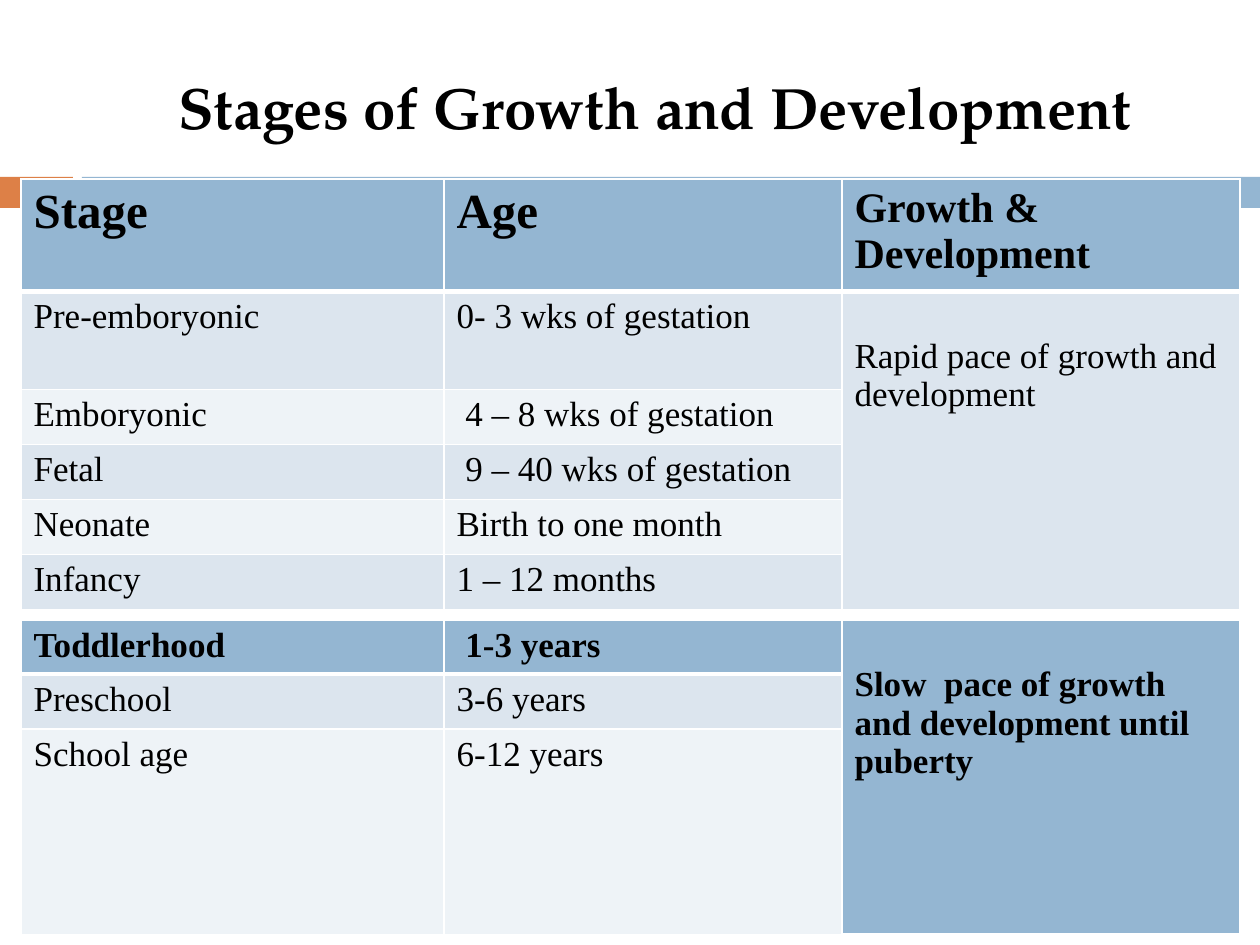
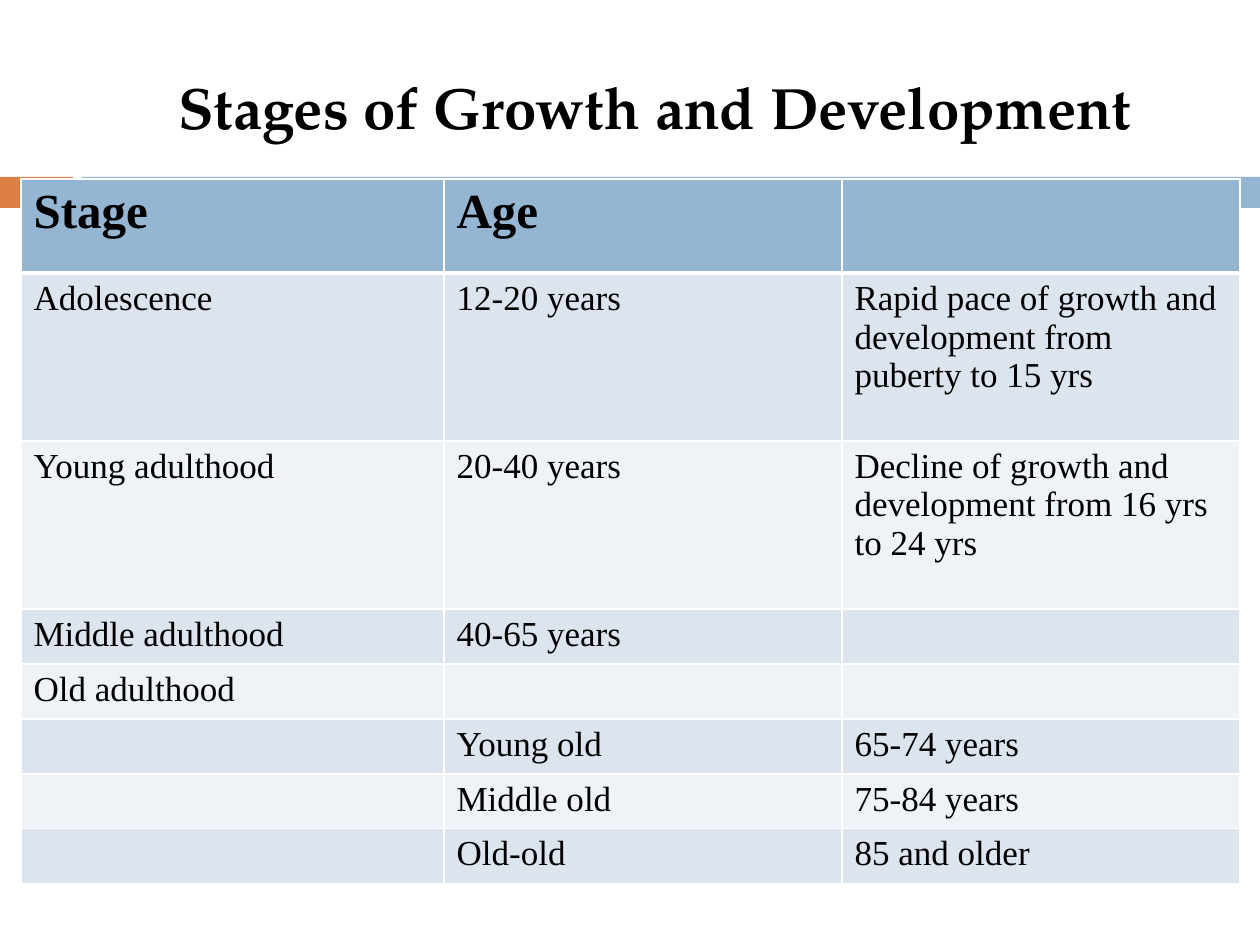
from dataclasses import dataclass

from lxml.etree import SubElement
from pptx import Presentation
from pptx.dml.color import RGBColor as Rgb
from pptx.enum.shapes import MSO_SHAPE as Preset
from pptx.enum.text import MSO_ANCHOR as Anchor, PP_ALIGN as Align
from pptx.oxml.ns import qn
from pptx.slide import Slide
from pptx.table import _Cell as Cell
from pptx.util import Emu, Pt

PX_PER_INCH = 126


def px(length: int) -> Emu:
    return Emu(round(length * 914400 / PX_PER_INCH))


@dataclass(frozen=True)
class Theme:
    ink: str = "000000"
    accent: str = "DD8047"
    header: str = "94B6D2"
    odd_row: str = "DCE5EE"
    even_row: str = "EEF3F7"
    border: str = "FFFFFF"
    title_font: str = "TeX Gyre Pagella"
    table_font: str = "Times New Roman"
    title_size: float = 33.3
    heading_size: int = 28
    long_heading_size: int = 24
    body_size: int = 20


THEME = Theme()


@dataclass(frozen=True)
class Band:
    left: int
    width: int
    color: str


@dataclass(frozen=True)
class Row:
    height: int
    stage: str = ""
    age: str = ""
    pace: str = ""


@dataclass(frozen=True)
class StageTable:
    top: int
    rows: tuple[Row, ...]
    heading_sizes: tuple[int, int, int]
    pace_from: int | None = None  # first row of a pace cell that runs to the last row


# Shared geometry
TITLE = "Stages of Growth and Development"
BANDS = (Band(0, 73, THEME.accent), Band(82, 1178, THEME.header))
BAND_TOP, BAND_HEIGHT = 177, 31
TABLE_LEFT, TABLE_TOP = 21, 179
COLUMN_WIDTHS = (423, 398, 398)
LINE_ROW = 55
CELL_MARGIN, TEXT_LINE = 6, 39
HEADING_SIZES = (THEME.heading_size, THEME.heading_size, THEME.long_heading_size)

# Content
EARLY_STAGES = StageTable(TABLE_TOP, (
    Row(105, "Stage", "Age", "Growth & Development"),
    Row(98, "Pre-emboryonic", "0- 3 wks of gestation", "Rapid pace of growth and development"),
    Row(LINE_ROW, "Emboryonic", " 4 – 8 wks of gestation"),
    Row(LINE_ROW, "Fetal", " 9 – 40 wks of gestation"),
    Row(LINE_ROW, "Neonate", "Birth to one month"),
    Row(LINE_ROW, "Infancy", "1 – 12 months"),
), HEADING_SIZES, pace_from=1)

CHILDHOOD = StageTable(620, (
    Row(51, "Toddlerhood", " 1-3 years", "Slow  pace of growth and development until puberty"),
    Row(LINE_ROW, "Preschool", "3-6 years"),
    Row(206, "School age", "6-12 years"),
), (THEME.body_size,) * 3, pace_from=0)

ADULTHOOD = StageTable(TABLE_TOP, (
    Row(94, "Stage", "Age"),
    Row(168, "Adolescence", "12-20 years",
        "Rapid pace of growth and development from puberty to 15 yrs"),
    Row(168, "Young adulthood", "20-40 years",
        "Decline of growth and development from 16 yrs to 24 yrs"),
    Row(LINE_ROW, "Middle adulthood", "40-65 years"),
    Row(LINE_ROW, "Old adulthood"),
    Row(LINE_ROW, "", "Young old", "65-74 years"),
    Row(LINE_ROW, "", "Middle old", "75-84 years"),
    Row(LINE_ROW, "", "Old-old", "85 and older"),
), HEADING_SIZES)

SLIDES = ((EARLY_STAGES, CHILDHOOD), (ADULTHOOD,))


def style_font(font, name: str, size: float, bold: bool) -> None:
    font.name, font.size, font.bold = name, Pt(size), bold
    font.color.rgb = Rgb.from_string(THEME.ink)


def draw_bands(slide: Slide) -> None:
    for band in BANDS:
        bar = slide.shapes.add_shape(Preset.RECTANGLE, px(band.left), px(BAND_TOP),
                                     px(band.width), px(BAND_HEIGHT))
        bar.shadow.inherit = False
        bar.fill.solid()
        bar.fill.fore_color.rgb = Rgb.from_string(band.color)
        bar.line.fill.background()


def draw_title(slide: Slide) -> None:
    frame = slide.shapes.add_textbox(px(57), px(64), px(1197), px(84)).text_frame
    frame.word_wrap = True
    frame.vertical_anchor = Anchor.MIDDLE
    frame.margin_top = frame.margin_bottom = 0
    line = frame.paragraphs[0]
    line.text, line.alignment = TITLE, Align.CENTER
    style_font(line.font, THEME.title_font, THEME.title_size, True)


def draw_borders(cell: Cell, bottom_width: int) -> None:
    properties = cell._tc.get_or_add_tcPr()
    for side, width in (("L", 1), ("R", 1), ("T", 1), ("B", bottom_width)):
        edge = SubElement(properties, qn(f"a:ln{side}"), w=str(Pt(width)))
        SubElement(SubElement(edge, qn("a:solidFill")), qn("a:srgbClr"), val=THEME.border)


def fill_cell(cell: Cell, text: str, size: int, color: str, is_header: bool) -> None:
    draw_borders(cell, 3 if is_header else 1)
    cell.fill.solid()
    cell.fill.fore_color.rgb = Rgb.from_string(color)
    cell.margin_top = cell.margin_bottom = px(CELL_MARGIN)
    line = cell.text_frame.paragraphs[0]
    line.text, line.alignment = text, Align.LEFT
    style_font(line.font, THEME.table_font, size, is_header)


def draw_table(slide: Slide, content: StageTable) -> None:
    rows = content.rows
    table = slide.shapes.add_table(
        len(rows), len(COLUMN_WIDTHS), px(TABLE_LEFT), px(content.top),
        px(sum(COLUMN_WIDTHS)), px(sum(row.height for row in rows))).table
    for column, width in zip(table.columns, COLUMN_WIDTHS):
        column.width = px(width)
    for r, row in enumerate(rows):
        table.rows[r].height = px(row.height)
        is_header = r == 0
        color = THEME.header if is_header else THEME.odd_row if r % 2 else THEME.even_row
        for c, text in enumerate((row.stage, row.age, row.pace)):
            size = content.heading_sizes[c] if is_header else THEME.body_size
            fill_cell(table.cell(r, c), text, size, color, is_header)
    # The shared pace cell starts one line lower
    if content.pace_from is not None:
        pace = table.cell(content.pace_from, 2)
        pace.merge(table.cell(len(rows) - 1, 2))
        pace.margin_top = px(CELL_MARGIN + TEXT_LINE)


def main() -> None:
    deck = Presentation()
    deck.slide_width, deck.slide_height = px(1260), px(945)
    for tables in SLIDES:
        slide = deck.slides.add_slide(deck.slide_layouts[6])
        draw_bands(slide)
        draw_title(slide)
        for content in tables:
            draw_table(slide, content)
    deck.save("out.pptx")


if __name__ == "__main__":
    main()
